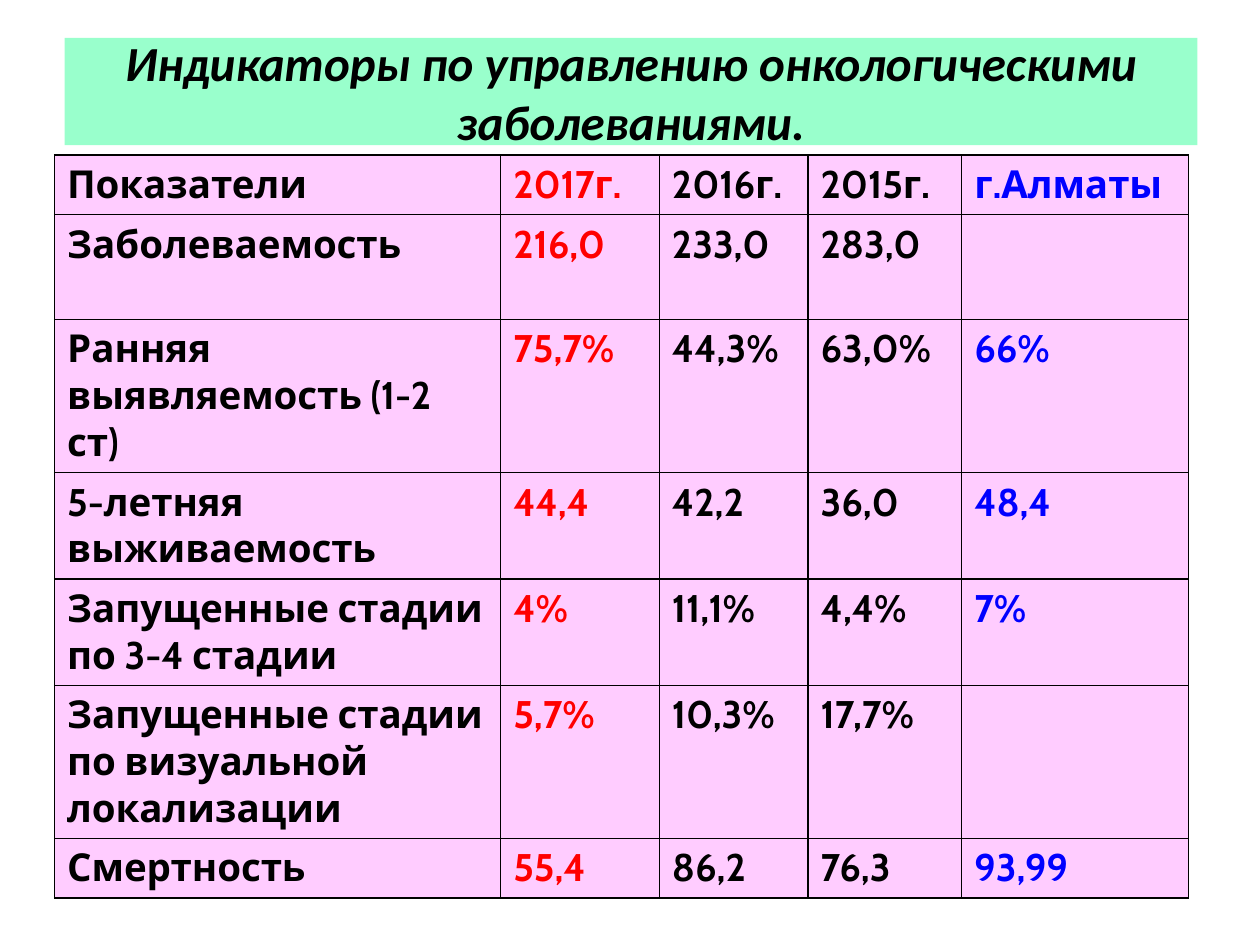
import pptx
import pptx.util
import pptx.dml.color
import pptx.enum.text
import pptx.oxml
import lxml.etree

Pt = pptx.util.Pt
TEXT = pptx.enum.text

COLORS = {
    "black": "000000",
    "red": "FF0000",
    "blue": "0000FF",
    "mint": "99FFCC",
    "pink": "FFCCFF",
}

TITLE = "Индикаторы по управлению онкологическими заболеваниями."
ROWS = [
    ("Показатели", "2017г.", "2016г.", "2015г.", "г.Алматы"),
    ("Заболеваемость", "216,0", "233,0", "283,0", ""),
    ("Ранняя выявляемость (1-2 ст)", "75,7%", "44,3%", "63,0%", "66%"),
    ("5-летняя выживаемость", "44,4", "42,2", "36,0", "48,4"),
    ("Запущенные стадии по 3-4 стадии", "4%", "11,1%", "4,4%", "7%"),
    ("Запущенные стадии по визуальной локализации",
     "5,7%", "10,3%", "17,7%", ""),
    ("Смертность", "55,4", "86,2", "76,3", "93,99"),
]
# One text colour and one width per column
INKS = ["black", "red", "black", "black", "blue"]
WIDTHS = [254.9, 90.7, 85, 87.8, 129.6]
# Row height by number of text lines
HEIGHTS = {1: 33.8, 2: 60.1, 3: 86.4}
LINES = [1, 2, 3, 2, 2, 3, 1]


def rgb(name):
    return pptx.dml.color.RGBColor.from_string(COLORS[name])


def paint(part, name):
    part.fill.solid()
    part.fill.fore_color.rgb = rgb(name)


def add_run(para, text, face, size, ink, slant=False):
    run = para.add_run()
    run.text = text
    font = run.font
    font.name, font.size = face, Pt(size)
    font.bold, font.italic = True, slant
    font.color.rgb = rgb(ink)


def add_edges(cell, ink, width):
    props = cell._tc.get_or_add_tcPr()
    for side in ("lnL", "lnR", "lnT", "lnB"):
        line = lxml.etree.SubElement(
            props, pptx.oxml.ns.qn("a:" + side), w=str(Pt(width)))
        fill = lxml.etree.SubElement(line, pptx.oxml.ns.qn("a:solidFill"))
        lxml.etree.SubElement(
            fill, pptx.oxml.ns.qn("a:srgbClr"), val=COLORS[ink])


def put_title(slide, left, top, width, height):
    title = slide.shapes.title
    title.left, title.top = Pt(left), Pt(top)
    title.width, title.height = Pt(width), Pt(height)
    paint(title, "mint")
    frame = title.text_frame
    frame.word_wrap = True
    frame.auto_size = TEXT.MSO_AUTO_SIZE.NONE
    frame.vertical_anchor = TEXT.MSO_ANCHOR.MIDDLE
    para = frame.paragraphs[0]
    para.alignment = TEXT.PP_ALIGN.CENTER
    add_run(para, TITLE, "Calibri", 28, "black", slant=True)


def put_table(slide, left, top, width, height):
    table = slide.shapes.add_table(
        len(ROWS), len(WIDTHS),
        Pt(left), Pt(top), Pt(width), Pt(height)).table
    table.first_row = table.horz_banding = False

    # Share the box out among columns and rows
    for col, part in zip(table.columns, WIDTHS):
        col.width = Pt(width * part / sum(WIDTHS))
    total = sum(HEIGHTS[count] for count in LINES)
    for row, count in zip(table.rows, LINES):
        row.height = Pt(height * HEIGHTS[count] / total)

    # Cells
    for row, texts in zip(table.rows, ROWS):
        for cell, text, ink in zip(row.cells, texts, INKS):
            add_edges(cell, "black", 1)
            paint(cell, "pink")
            if text:
                add_run(cell.text_frame.paragraphs[0],
                        text, "Cabin", 22, ink)


def main():
    deck = pptx.Presentation()
    deck.slide_width, deck.slide_height = Pt(720), Pt(540)
    slide = deck.slides.add_slide(deck.slide_layouts[5])
    put_title(slide, 36.9, 21.7, 647.3, 61.2)
    put_table(slide, 31.2, 88.6, 648, 420)
    deck.save("out.pptx")


if __name__ == "__main__":
    main()
